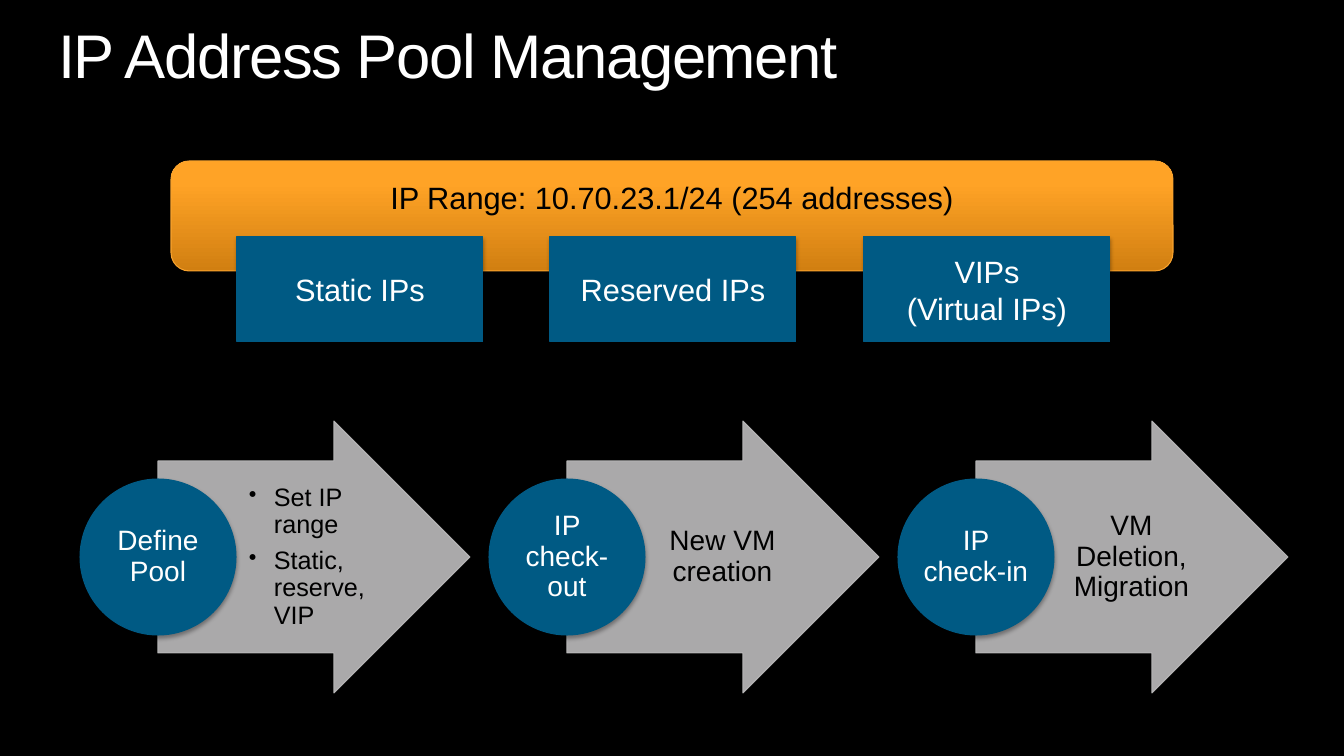
from lxml import etree
from pptx import Presentation
from pptx.dml.color import RGBColor
from pptx.enum.shapes import MSO_SHAPE
from pptx.enum.text import MSO_ANCHOR, PP_ALIGN
from pptx.oxml.ns import qn
from pptx.util import Emu, Pt

RECTANGLE, ROUNDED, CIRCLE = MSO_SHAPE.RECTANGLE, MSO_SHAPE.ROUNDED_RECTANGLE, MSO_SHAPE.OVAL
TOP, MIDDLE, BOTTOM = MSO_ANCHOR.TOP, MSO_ANCHOR.MIDDLE, MSO_ANCHOR.BOTTOM
LEFT, CENTER = PP_ALIGN.LEFT, PP_ALIGN.CENTER

BLACK = RGBColor(0x00, 0x00, 0x00)
WHITE = RGBColor(0xFF, 0xFF, 0xFF)
BLUE = RGBColor(0x00, 0x5A, 0x84)
GRAY = RGBColor(0xBD, 0xBC, 0xBD)
ORANGE = RGBColor(0xFF, 0xA3, 0x26)
DARK_ORANGE = RGBColor(0xD1, 0x7F, 0x11)
ORANGE_EDGE = RGBColor(0xF9, 0xA3, 0x2E)

TITLE = "IP Address Pool Management"
IP_RANGE = "IP Range: 10.70.23.1/24 (254 addresses)"
POOLS = [["Static IPs"], ["Reserved IPs"], ["VIPs", "(Virtual IPs)"]]
STEPS = [
    ("Define Pool", ["Set IP range", "Static, reserve, VIP"]),
    ("IP check-out", ["New VM creation"]),
    ("IP check-in", ["VM Deletion, Migration"]),
]

PAGE_WIDTH, PAGE_HEIGHT = 1344, 756
POOL_LEFT, POOL_SPAN = 237, 627
STEP_LEFT, STEP_PITCH = 80, 409
CIRCLE_SIZE = 156
MIDLINE = 557
ARROW_WIDTH, HEAD_WIDTH = 312, 136
HEAD_HALF, SHAFT_HALF = 136, 96


def px(length):
    return Emu(round(length * 12192000 / PAGE_WIDTH))


def write(shape, lines, size, color, insets, anchor=MIDDLE, align=CENTER, spacing=None):
    frame = shape.text_frame
    frame.word_wrap = True
    frame.vertical_anchor = anchor
    frame.margin_left, frame.margin_top, frame.margin_right, frame.margin_bottom = map(px, insets)
    frame.text = "\n".join(lines)
    for para in frame.paragraphs:
        para.alignment = align
        para.line_spacing = spacing
        para.font.name = "Arial"
        para.font.size = Pt(size)
        para.font.color.rgb = color


def paint(shape, color, edge):
    shape.shadow.inherit = False
    shape.fill.solid()
    shape.fill.fore_color.rgb = color
    shape.line.color.rgb = edge
    shape.line.width = Pt(0.75)
    return shape


def add_filled(kind, left, top, width, height, color, edge):
    shape = page.shapes.add_shape(kind, px(left), px(top), px(width), px(height))
    return paint(shape, color, edge)


def add_arrow(left):
    neck, tip = left + ARROW_WIDTH - HEAD_WIDTH, left + ARROW_WIDTH
    corners = [
        (neck, MIDLINE - SHAFT_HALF), (neck, MIDLINE - HEAD_HALF), (tip, MIDLINE),
        (neck, MIDLINE + HEAD_HALF), (neck, MIDLINE + SHAFT_HALF), (left, MIDLINE + SHAFT_HALF),
    ]
    outline = page.shapes.build_freeform(px(left), px(MIDLINE - SHAFT_HALF))
    outline.add_line_segments([(px(x), px(y)) for x, y in corners], close=True)
    arrow = paint(outline.convert_to_shape(), GRAY, GRAY)
    for tint in arrow.element.spPr.findall(".//" + qn("a:srgbClr")):
        etree.SubElement(tint, qn("a:alpha"), val="90000")
    return arrow


def add_shadow(shape):
    effects = shape.element.spPr.find(qn("a:effectLst"))
    shadow = etree.SubElement(effects, qn("a:outerShdw"), blurRad=str(Pt(3.1)),
                              dist=str(Pt(1.8)), dir="5400000", rotWithShape="0")
    tint = etree.SubElement(shadow, qn("a:srgbClr"), val="000000")
    etree.SubElement(tint, qn("a:alpha"), val="35000")


def add_bullets(shape):
    for index, para in enumerate(shape.text_frame.paragraphs):
        properties = para._p.get_or_add_pPr()
        properties.set("marL", str(px(25)))
        properties.set("indent", str(px(-25)))
        para.space_before = Pt(3.6 if index else 0)
        para.space_after = Pt(2.7)
        size = etree.Element(qn("a:buSzPct"), val="90000")
        mark = etree.Element(qn("a:buChar"), char="•")
        defaults = properties.find(qn("a:defRPr"))
        defaults.addprevious(size)
        defaults.addprevious(mark)


deck = Presentation()
deck.slide_width, deck.slide_height = px(PAGE_WIDTH), px(PAGE_HEIGHT)
page = deck.slides.add_slide(deck.slide_layouts[6])
page.background.fill.solid()
page.background.fill.fore_color.rgb = BLACK

title = page.shapes.add_textbox(px(58), px(24), px(1229), px(68))
write(title, [TITLE], 44, WHITE, (0, 0, 0, 0), BOTTOM, LEFT, 0.9)
title.text_frame.paragraphs[0].runs[0].font._element.set("spc", "-100")

bar = add_filled(ROUNDED, 171, 161, 1002, 110, ORANGE, ORANGE_EDGE)
bar.fill.gradient()
bar.fill.gradient_angle = 90
for stop, color, position in zip(bar.fill.gradient_stops, (DARK_ORANGE, ORANGE), (0, 0.8)):
    stop.color.rgb = color
    stop.position = position
add_shadow(bar)
write(bar, [IP_RANGE], 22, BLACK, (10, 12, 10, 5), TOP)

for index, lines in enumerate(POOLS):
    left = POOL_LEFT + POOL_SPAN * index // 2
    pool = add_filled(RECTANGLE, left, 237, 246, 105, BLUE, BLUE)
    add_shadow(pool)
    write(pool, lines, 22, WHITE, (10, 5, 10, 5))

for index, (name, details) in enumerate(STEPS):
    left = STEP_LEFT + index * STEP_PITCH
    arrow = add_arrow(left + CIRCLE_SIZE // 2)
    if len(details) > 1:
        write(arrow, details, 18, BLACK, (91, 40, 60, 40), align=LEFT, spacing=0.9)
        add_bullets(arrow)
    else:
        write(arrow, details, 20, BLACK, (84, 40, 85, 40), spacing=0.9)

    circle = add_filled(CIRCLE, left, MIDLINE - CIRCLE_SIZE // 2, CIRCLE_SIZE, CIRCLE_SIZE, BLUE, BLUE)
    add_shadow(circle)
    write(circle, [name], 20, WHITE, (0, 0, 0, 0), spacing=0.9)

deck.save("out.pptx")
